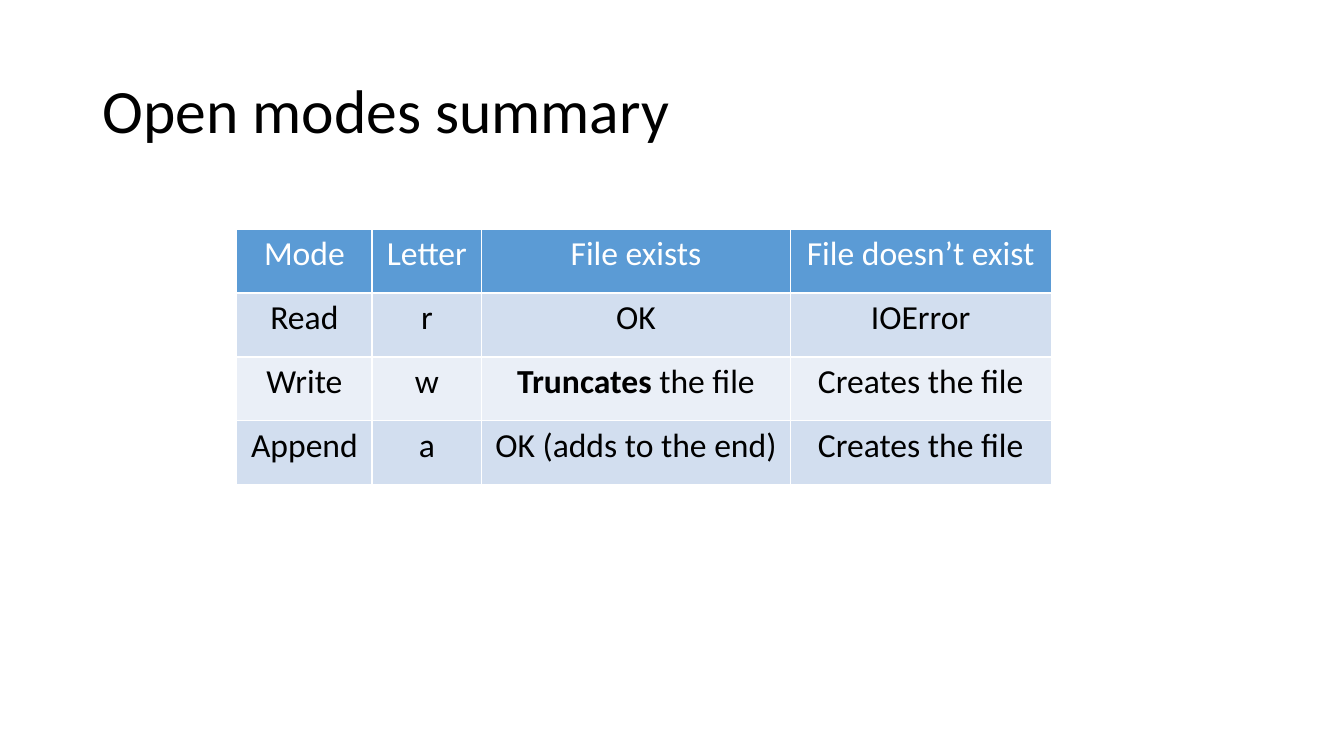
import pptx
import pptx.dml.color
import pptx.enum.text
import pptx.util

Cm = pptx.util.Cm
RGBColor = pptx.dml.color.RGBColor

BLACK = RGBColor(0x00, 0x00, 0x00)
WHITE = RGBColor(0xFF, 0xFF, 0xFF)
HEADER_BLUE = RGBColor(0x5B, 0x9B, 0xD5)
BAND_FILLS = (RGBColor(0xEA, 0xEF, 0xF7), RGBColor(0xD2, 0xDE, 0xEF))

FONT_NAME = "Calibri"
BOLD_WORD = "Truncates"
COLUMN_SHARES = (1.34, 1.09, 3.06, 2.59)
MODE_ROWS = (
    ("Mode", "Letter", "File exists", "File doesn’t exist"),
    ("Read", "r", "OK", "IOError"),
    ("Write", "w", "Truncates the file", "Creates the file"),
    ("Append", "a", "OK (adds to the end)", "Creates the file"),
)


def format_paragraph(paragraph, size, color, alignment):
    paragraph.alignment = alignment
    paragraph.font.name = FONT_NAME
    paragraph.font.size = pptx.util.Pt(size)
    paragraph.font.color.rgb = color


def place_title(slide, text, left, top, width, height):
    title = slide.shapes.title
    title.left, title.top, title.width, title.height = left, top, width, height
    title.text_frame.text = text
    title.text_frame.vertical_anchor = pptx.enum.text.MSO_ANCHOR.MIDDLE
    paragraph = title.text_frame.paragraphs[0]
    paragraph.line_spacing = 0.9
    format_paragraph(paragraph, 44, BLACK, pptx.enum.text.PP_ALIGN.LEFT)


def fill_cell(cell, text, fill_color, font_color):
    cell.fill.solid()
    cell.fill.fore_color.rgb = fill_color
    paragraph = cell.text_frame.paragraphs[0]
    format_paragraph(paragraph, 24, font_color, pptx.enum.text.PP_ALIGN.CENTER)
    paragraph.font.bold = False
    if text.startswith(BOLD_WORD):
        bold_run = paragraph.add_run()
        bold_run.text = BOLD_WORD
        bold_run.font.bold = True
        text = text.removeprefix(BOLD_WORD)
    paragraph.add_run().text = text


def add_mode_table(slide, left, top, width, height):
    table = slide.shapes.add_table(
        len(MODE_ROWS), len(COLUMN_SHARES), left, top, width, height
    ).table
    for column, share in zip(table.columns, COLUMN_SHARES):
        column.width = int(width * share / sum(COLUMN_SHARES))
    for row_index, texts in enumerate(MODE_ROWS):
        is_header = row_index == 0
        fill_color = HEADER_BLUE if is_header else BAND_FILLS[row_index % 2]
        font_color = WHITE if is_header else BLACK
        for column_index, text in enumerate(texts):
            fill_cell(table.cell(row_index, column_index), text, fill_color, font_color)


def main():
    presentation = pptx.Presentation()
    presentation.slide_width = Cm(33.87)
    presentation.slide_height = Cm(19.05)
    slide = presentation.slides.add_slide(presentation.slide_layouts[5])
    place_title(slide, "Open modes summary", Cm(2.33), Cm(1.01), Cm(29.21), Cm(3.68))
    add_mode_table(slide, Cm(5.97), Cm(5.77), Cm(20.52), Cm(6.45))
    presentation.save("out.pptx")


if __name__ == "__main__":
    main()
